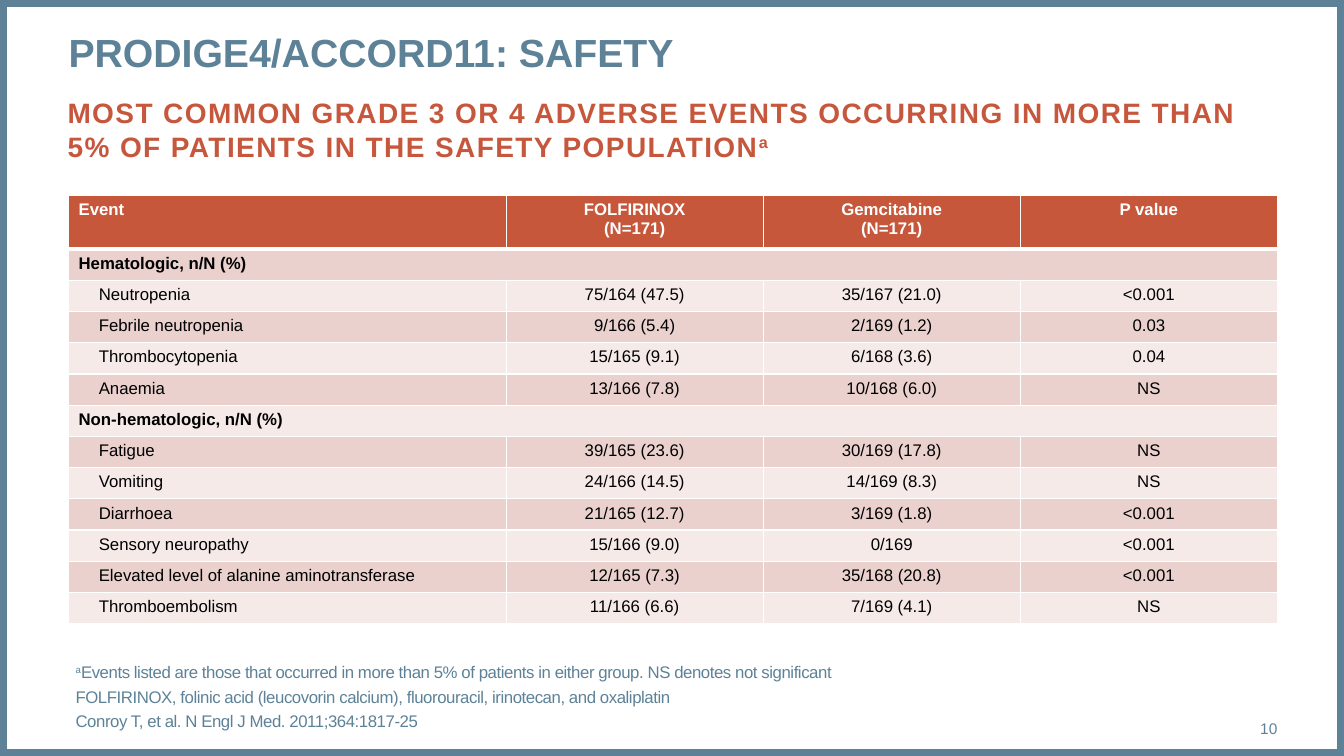
from lxml import etree
from pptx import Presentation
from pptx.dml.color import RGBColor
from pptx.enum.shapes import MSO_SHAPE
from pptx.enum.text import MSO_ANCHOR, PP_ALIGN
from pptx.oxml.ns import qn
from pptx.util import Inches, Pt

RECT = MSO_SHAPE.RECTANGLE
TOP, MIDDLE = MSO_ANCHOR.TOP, MSO_ANCHOR.MIDDLE
LEFT, CENTER, RIGHT = PP_ALIGN.LEFT, PP_ALIGN.CENTER, PP_ALIGN.RIGHT

COLORS = {
    "slate": "5D8298", "rust": "C7573C", "header": "C6573B",
    "dark_band": "EAD1CE", "light_band": "F5EAE8",
    "white": "FFFFFF", "black": "000000",
}

HEADER = ["Event", "FOLFIRINOX\v(N=171)", "Gemcitabine\v(N=171)", "P value"]
# A row with a single entry is a group heading across the whole table.
ROWS = [
    ["Hematologic, n/N (%)"],
    ["Neutropenia", "75/164 (47.5)", "35/167 (21.0)", "<0.001"],
    ["Febrile neutropenia", "9/166 (5.4)", "2/169 (1.2)", "0.03"],
    ["Thrombocytopenia", "15/165 (9.1)", "6/168 (3.6)", "0.04"],
    ["Anaemia", "13/166 (7.8)", "10/168 (6.0)", "NS"],
    ["Non-hematologic, n/N (%)"],
    ["Fatigue", "39/165 (23.6)", "30/169 (17.8)", "NS"],
    ["Vomiting", "24/166 (14.5)", "14/169 (8.3)", "NS"],
    ["Diarrhoea", "21/165 (12.7)", "3/169 (1.8)", "<0.001"],
    ["Sensory neuropathy", "15/166 (9.0)", "0/169", "<0.001"],
    ["Elevated level of alanine aminotransferase",
     "12/165 (7.3)", "35/168 (20.8)", "<0.001"],
    ["Thromboembolism", "11/166 (6.6)", "7/169 (4.1)", "NS"],
]
COL_WIDTHS = [4.34, 2.55, 2.55, 2.55]
HEADER_HEIGHT, ROW_HEIGHT = 0.53, 0.31


class SlideBuilder:
    def __init__(self, slide, font="Arial"):
        self.slide = slide
        self.font = font

    def color(self, name):
        return RGBColor.from_string(COLORS[name])

    def style(self, p, size, color, bold=False, align=LEFT):
        p.alignment = align
        f = p.font
        f.name, f.size, f.bold = self.font, Pt(size), bold
        f.color.rgb = self.color(color)

    def frame(self, width, height, color, weight):
        s = self.slide.shapes.add_shape(RECT, 0, 0, width, height)
        s.shadow.inherit = False
        s.fill.background()
        s.line.color.rgb = self.color(color)
        s.line.width = Pt(weight)

    def fill_text(self, s, box, paragraphs, size, color, bold=False,
                  align=LEFT, anchor=TOP, gap=0, tracking=0):
        """Place s at box; each paragraph is a list of runs, "^" marking a superscript."""
        s.left, s.top, s.width, s.height = map(Inches, box)
        tf = s.text_frame
        tf.word_wrap = True
        tf.vertical_anchor = anchor
        tf.margin_left = tf.margin_right = tf.margin_top = tf.margin_bottom = 0
        for i, runs in enumerate(paragraphs):
            p = tf.add_paragraph() if i else tf.paragraphs[0]
            self.style(p, size, color, bold, align)
            if i:
                p.space_before = Pt(gap)
            for text in runs:
                r = p.add_run()
                r.text = text.lstrip("^")
                rPr = r.font._element
                if text.startswith("^"):
                    rPr.set("baseline", "30000")
                if tracking:
                    rPr.set("spc", str(round(tracking * 100)))

    def title(self, box, text, size, color):
        self.fill_text(self.slide.shapes.title, box, [[text]], size, color, bold=True)

    def text(self, box, paragraphs, size, color, **options):
        s = self.slide.shapes.add_textbox(0, 0, 0, 0)
        self.fill_text(s, box, paragraphs, size, color, **options)

    def cell(self, cell, text, fill, color, bold, align, indent=0, top=1, bottom=1):
        """Fill one table cell; top and bottom are border widths in points."""
        tcPr = cell._tc.get_or_add_tcPr()
        for side, weight in (("L", 1), ("R", 1), ("T", top), ("B", bottom)):
            ln = etree.SubElement(tcPr, qn("a:ln" + side), w=str(Pt(weight)))
            solid = etree.SubElement(ln, qn("a:solidFill"))
            etree.SubElement(solid, qn("a:srgbClr"), val=COLORS["white"])
        cell.fill.solid()
        cell.fill.fore_color.rgb = self.color(fill)
        cell.text = text
        p = cell.text_frame.paragraphs[0]
        self.style(p, 12, color, bold, align)
        if indent:
            p._p.get_or_add_pPr().set("indent", str(Inches(indent)))

    def table(self, left, top, header, rows):
        height = HEADER_HEIGHT + ROW_HEIGHT * len(rows)
        s = self.slide.shapes.add_table(
            len(rows) + 1, len(header), Inches(left), Inches(top),
            Inches(sum(COL_WIDTHS)), Inches(height))
        table = s.table
        table.horz_banding = False
        for column, width in zip(table.columns, COL_WIDTHS):
            column.width = Inches(width)
        for row in table.rows:
            row.height = Inches(ROW_HEIGHT)
        table.rows[0].height = Inches(HEADER_HEIGHT)
        for j, text in enumerate(header):
            self.cell(table.cell(0, j), text, "header", "white", True,
                      CENTER if j else LEFT, bottom=3)
        for i, values in enumerate(rows, 1):
            band = "dark_band" if i % 2 else "light_band"
            group = len(values) == 1
            for j in range(len(header)):
                self.cell(table.cell(i, j), values[j] if j < len(values) else "",
                          band, "black", group, CENTER if j else LEFT,
                          indent=0 if group or j else 0.2, top=3 if i == 1 else 1)
            if group:
                table.cell(i, 0).merge(table.cell(i, len(header) - 1))


def main():
    prs = Presentation()
    prs.slide_width, prs.slide_height = Inches(13.33), Inches(7.5)
    b = SlideBuilder(prs.slides.add_slide(prs.slide_layouts[5]))
    b.frame(prs.slide_width, prs.slide_height, "slate", 10)
    b.text((0.67, 0.95, 12, 0.77),
           [["MOST COMMON GRADE 3 OR 4 ADVERSE EVENTS OCCURRING IN MORE THAN "
             "5% OF PATIENTS IN THE SAFETY POPULATION", "^a"]],
           20, "rust", bold=True, tracking=1)
    b.title((0.68, 0.28, 11.99, 0.94), "PRODIGE4/ACCORD11: SAFETY", 28, "slate")
    b.table(0.68, 1.94, HEADER, ROWS)
    b.text((0.75, 6.71, 11.13, 0.4),
           [["^a", "Events listed are those that occurred in more than 5% of "
             "patients in either group. NS denotes not significant"],
            ["FOLFIRINOX, folinic acid (leucovorin calcium), fluorouracil, "
             "irinotecan, and oxaliplatin"],
            ["Conroy T, et al. N Engl J Med. 2011;364:1817-25"]],
           12, "slate", anchor=MIDDLE, gap=3, tracking=-0.3)
    b.text((11.81, 7.03, 0.86, 0.4), [["10"]], 11, "slate", align=RIGHT, anchor=MIDDLE)
    prs.save("out.pptx")


if __name__ == "__main__":
    main()
